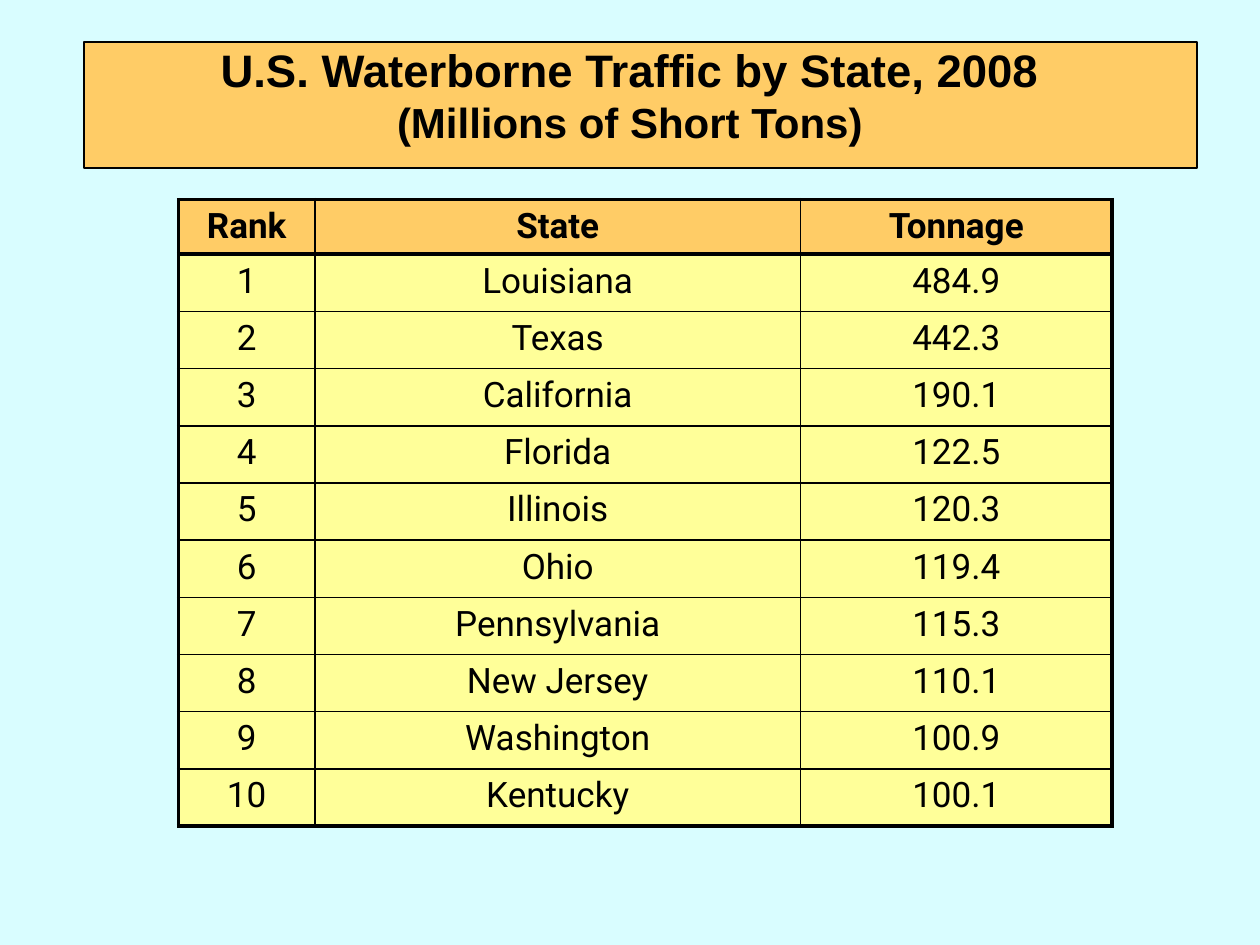
from dataclasses import dataclass

from lxml.etree import SubElement
from pptx import Presentation
from pptx.dml.color import RGBColor
from pptx.enum.shapes import MSO_SHAPE
from pptx.enum.text import MSO_ANCHOR, PP_ALIGN
from pptx.oxml.ns import qn
from pptx.util import Pt


@dataclass(frozen=True)
class Theme:
    background: str = "D9FDFF"
    accent: str = "FFCC66"
    body: str = "FFFF99"
    ink: str = "000000"
    title_font: str = "Arial"
    table_font: str = "Roboto"
    title_size: float = 26
    subtitle_size: float = 24
    table_size: float = 20
    thin: float = 1
    thick: float = 2.25


class SlideBuilder:
    """Draws styled elements on the current slide."""

    def __init__(self, deck, theme):
        self.theme = theme
        self.page = deck.slides.add_slide(deck.slide_layouts[6])
        self.paint(self.page.background.fill, theme.background)

    def paint(self, fill, color):
        fill.solid()
        fill.fore_color.rgb = RGBColor.from_string(color)

    def style(self, span, font, size, bold):
        span.font.name = font
        span.font.size = Pt(size)
        span.font.bold = bold
        span.font.color.rgb = RGBColor.from_string(self.theme.ink)

    def banner(self, left, top, width, height):
        box = self.page.shapes.add_shape(
            MSO_SHAPE.RECTANGLE, Pt(left), Pt(top), Pt(width), Pt(height))
        box.shadow.inherit = False
        self.paint(box.fill, self.theme.accent)
        self.paint(box.line.fill, self.theme.ink)
        box.line.width = Pt(self.theme.thin)

    def title(self, lines, left, top, width, height):
        box = self.page.shapes.add_textbox(Pt(left), Pt(top), Pt(width), Pt(height))
        frame = box.text_frame
        frame.word_wrap = True
        frame.vertical_anchor = MSO_ANCHOR.MIDDLE
        para = frame.paragraphs[0]
        para.text = "\v".join(lines)
        para.alignment = PP_ALIGN.CENTER
        sizes = (self.theme.title_size, self.theme.subtitle_size)
        for span, size in zip(para.runs, sizes):
            self.style(span, self.theme.title_font, size, True)

    def borders(self, cell, thick_sides):
        properties = cell._tc.get_or_add_tcPr()
        for position, side in enumerate(("lnL", "lnR", "lnT", "lnB")):
            width = self.theme.thick if side in thick_sides else self.theme.thin
            line = properties.makeelement(qn(f"a:{side}"), {"w": str(Pt(width))})
            fill = SubElement(line, qn("a:solidFill"))
            SubElement(fill, qn("a:srgbClr"), val=self.theme.ink)
            properties.insert(position, line)

    def table(self, records, left, top, column_widths, header_height, row_height):
        heights = [header_height] + [row_height] * (len(records) - 1)
        table = self.page.shapes.add_table(
            len(records), len(column_widths), Pt(left), Pt(top),
            Pt(sum(column_widths)), Pt(sum(heights))).table
        table.first_row = table.horz_banding = False
        for column, width in zip(table.columns, column_widths):
            column.width = Pt(width)
        last_row, last_column = len(records) - 1, len(column_widths) - 1
        for r, (record, height) in enumerate(zip(records, heights)):
            table.rows[r].height = Pt(height)
            for c, value in enumerate(record):
                cell = table.cell(r, c)
                cell.text_frame.text = value
                para = cell.text_frame.paragraphs[0]
                para.alignment = PP_ALIGN.CENTER
                self.style(para.runs[0], self.theme.table_font,
                           self.theme.table_size, r == 0)
                self.paint(cell.fill, self.theme.body if r else self.theme.accent)
                rules = {"lnL": c == 0, "lnR": c == last_column,
                         "lnT": r <= 1, "lnB": r in (0, last_row)}
                self.borders(cell, {side for side, thick in rules.items() if thick})


def main():
    states = [
        ("Louisiana", "484.9"), ("Texas", "442.3"), ("California", "190.1"),
        ("Florida", "122.5"), ("Illinois", "120.3"), ("Ohio", "119.4"),
        ("Pennsylvania", "115.3"), ("New Jersey", "110.1"),
        ("Washington", "100.9"), ("Kentucky", "100.1"),
    ]
    records = [("Rank", "State", "Tonnage")]
    records += [(str(rank), *entry) for rank, entry in enumerate(states, 1)]

    deck = Presentation()
    deck.slide_width, deck.slide_height = Pt(720), Pt(540)
    builder = SlideBuilder(deck, Theme())
    builder.banner(48, 24, 636, 72)
    builder.title(
        ["U.S. Waterborne Traffic by State, 2008", "(Millions of Short Tons)"],
        0, 12, 720, 84)
    builder.table(records, 102, 114, (78, 277.5, 178), 30.8, 32.7)
    deck.save("out.pptx")


if __name__ == "__main__":
    main()
